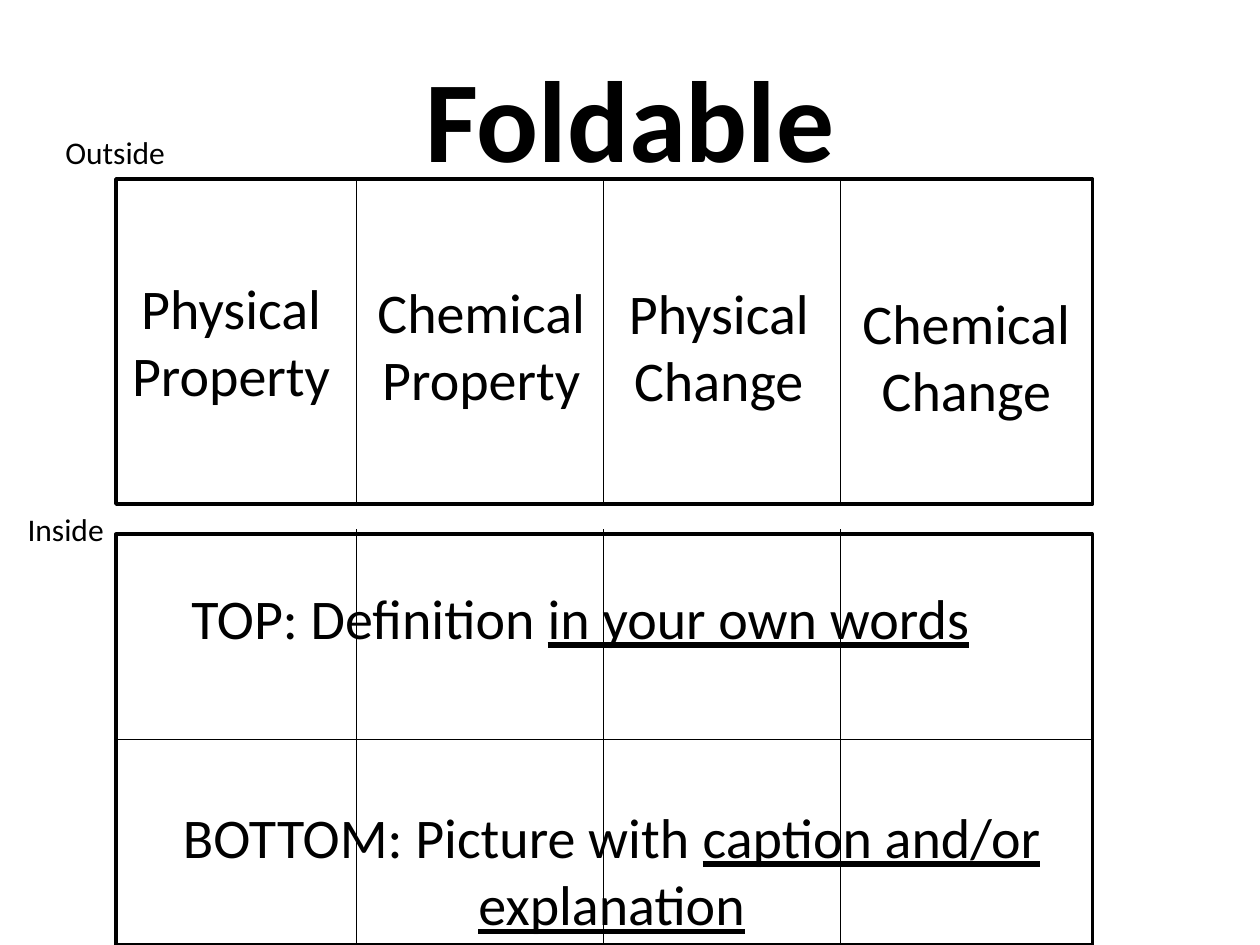
from lxml.etree import SubElement
from pptx import Presentation
from pptx.dml.color import RGBColor
from pptx.enum.shapes import MSO_CONNECTOR, MSO_SHAPE
from pptx.enum.text import MSO_ANCHOR, PP_ALIGN
from pptx.oxml.ns import qn
from pptx.util import Inches, Pt

COLORS = {"ink": "000000", "paper": "FFFFFF"}
INK = RGBColor.from_string(COLORS["ink"])
PAPER = RGBColor.from_string(COLORS["paper"])

deck = Presentation()
deck.slide_width, deck.slide_height = Inches(10), Inches(7.5)
page = deck.slides.add_slide(deck.slide_layouts[6])

LEFT, RIGHT = 0.92, 8.67
FOLDS = [2.83, 4.79, 6.67]
OUTSIDE_TOP, OUTSIDE_BOTTOM = 1.42, 4
INSIDE_TOP, INSIDE_BOTTOM = 4.24, 7.5
INSIDE_MIDDLE = (INSIDE_TOP + INSIDE_BOTTOM) / 2
FOLD_OVERHANG = 0.04


def add_text(area, spans, size, align=PP_ALIGN.CENTER, anchor=MSO_ANCHOR.TOP, bold=False):
    box = page.shapes.add_textbox(*[Inches(length) for length in area])
    frame = box.text_frame
    frame.word_wrap = True
    frame.vertical_anchor = anchor
    paragraph = frame.paragraphs[0]
    paragraph.alignment = align
    for words, underlined in spans:
        span = paragraph.add_run()
        span.text = words
        span.font.name = "Calibri"
        span.font.size = Pt(size)
        span.font.bold = bold
        span.font.underline = underlined
        span.font.color.rgb = INK


def add_panel(top, bottom, lines):
    panel = page.shapes.add_shape(
        MSO_SHAPE.RECTANGLE, Inches(LEFT), Inches(top), Inches(RIGHT - LEFT), Inches(bottom - top))
    panel.shadow.inherit = False
    panel.fill.solid()
    panel.fill.fore_color.rgb = PAPER
    panel.line.color.rgb = INK
    panel.line.width = Pt(2)
    for ends in lines:
        line = page.shapes.add_connector(
            MSO_CONNECTOR.STRAIGHT, *[Inches(length) for length in ends])
        line.line.color.rgb = INK
        line.line.width = Pt(0.75)
        SubElement(line._element.spPr, qn("a:effectLst"))


add_text((0.5, 0.3, 9, 1.25), [("Foldable", False)], 66, anchor=MSO_ANCHOR.MIDDLE, bold=True)

add_panel(OUTSIDE_TOP, OUTSIDE_BOTTOM,
          [(fold, OUTSIDE_TOP, fold, OUTSIDE_BOTTOM) for fold in FOLDS])

for label, left, top in [("Outside", 0.42, 1.01), ("Inside", 0.12, 4)]:
    add_text((left, top, 1.58, 0.4), [(label, False)], 18, PP_ALIGN.LEFT)

flaps = [
    ("Physical Property", 0.92, 2.12, 1.83),
    ("Chemical Property", 2.88, 2.15, 1.88),
    ("Physical Change", 4.83, 2.16, 1.75),
    ("Chemical Change", 6.67, 2.24, 2),
]
for term, left, top, width in flaps:
    add_text((left, top, width, 1.18), [(term, False)], 32)

inside_folds = [(fold, INSIDE_TOP - FOLD_OVERHANG, fold, INSIDE_BOTTOM) for fold in FOLDS]
add_panel(INSIDE_TOP, INSIDE_BOTTOM,
          [(LEFT, INSIDE_MIDDLE, RIGHT, INSIDE_MIDDLE)] + inside_folds)

add_text((1.42, 4.58, 6.67, 0.64),
         [("TOP: Definition ", False), ("in your own words", True)], 32, PP_ALIGN.LEFT)
add_text((1.21, 6.32, 7.29, 1.18),
         [("BOTTOM: Picture with ", False), ("caption and/or explanation", True)], 32)

deck.save("out.pptx")
